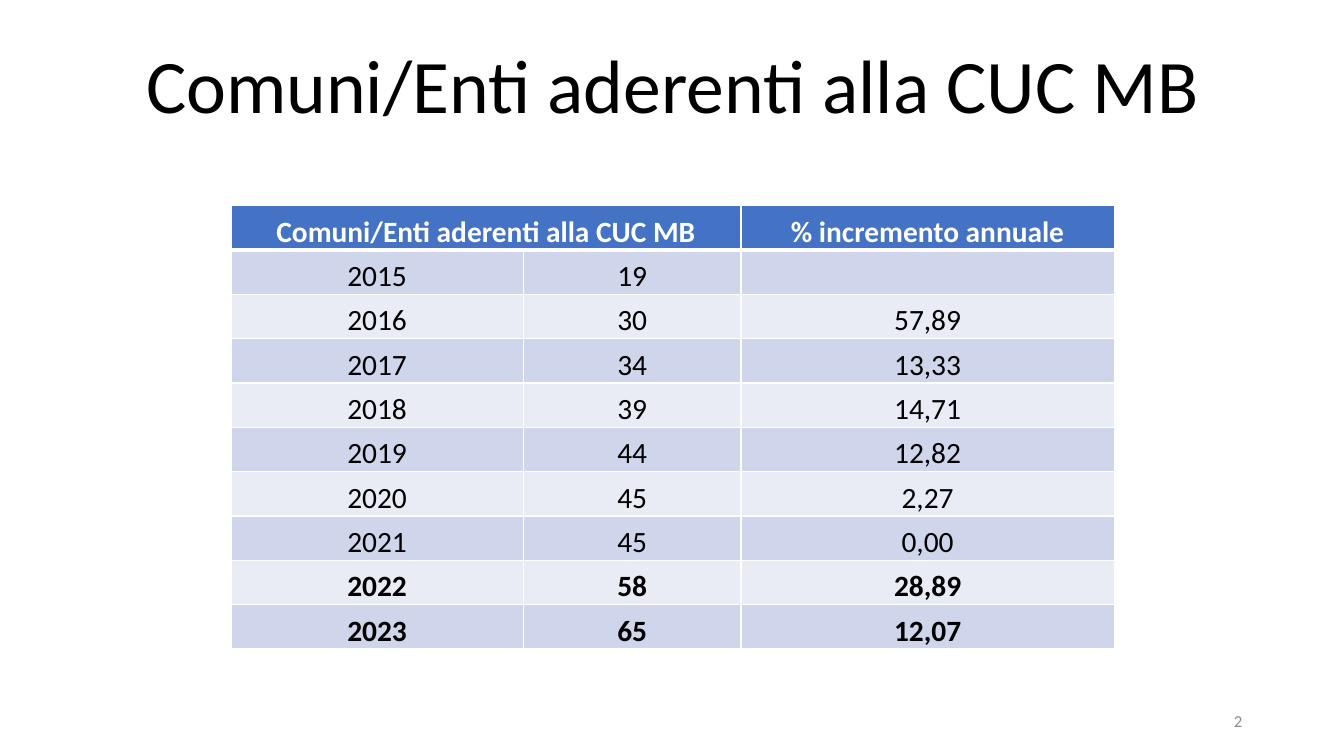
from dataclasses import dataclass

from lxml import etree
from pptx import Presentation
from pptx.dml.color import RGBColor
from pptx.enum.text import MSO_ANCHOR, PP_ALIGN
from pptx.oxml.ns import qn
from pptx.util import Inches, Pt

CENTER, RIGHT = PP_ALIGN.CENTER, PP_ALIGN.RIGHT
BOTTOM, MIDDLE = MSO_ANCHOR.BOTTOM, MSO_ANCHOR.MIDDLE

TITLE = "Comuni/Enti aderenti alla CUC MB"
HEADERS = (TITLE, "", "% incremento annuale")
MEMBERS = (
    ("2015", "19", ""),
    ("2016", "30", "57,89"),
    ("2017", "34", "13,33"),
    ("2018", "39", "14,71"),
    ("2019", "44", "12,82"),
    ("2020", "45", "2,27"),
    ("2021", "45", "0,00"),
    ("2022", "58", "28,89"),
    ("2023", "65", "12,07"),
)
HIGHLIGHTED_YEARS = ("2022", "2023")
COLUMN_WIDTHS = (2.9, 2.16, 3.7)
ROW_HEIGHT = 0.44


@dataclass(frozen=True)
class Theme:
    font: str = "Calibri"
    ink: str = "000000"
    white: str = "FFFFFF"
    muted: str = "8C8C8C"
    header: str = "4472C4"
    bands: tuple = ("CFD5EA", "E9EBF5")
    title_size: int = 54
    table_size: int = 21
    number_size: int = 12
    rule: int = 1
    header_rule: int = 3


def write_text(frame, text, *, font, size, color, align, bold=False, spacing=None):
    paragraph = frame.paragraphs[0]
    paragraph.alignment = align
    if spacing:
        paragraph.line_spacing = spacing
    run = paragraph.add_run()
    run.text = text
    run.font.name = font
    run.font.size = Pt(size)
    run.font.bold = bold
    run.font.color.rgb = RGBColor.from_string(color)


class SlideBuilder:
    """Draws text and tables on one slide in a shared theme."""

    def __init__(self, slide, theme):
        self.slide = slide
        self.theme = theme

    def label(self, text, left, top, width, height, anchor, **style):
        frame = self.slide.shapes.add_textbox(
            Inches(left), Inches(top), Inches(width), Inches(height)
        ).text_frame
        frame.word_wrap = True
        frame.vertical_anchor = anchor
        write_text(frame, text, font=self.theme.font, **style)

    def borders(self, cell, bottom, top):
        properties = cell._tc.get_or_add_tcPr()
        rule = self.theme.rule
        for side, width in (("L", rule), ("R", rule), ("T", top), ("B", bottom)):
            line = etree.SubElement(properties, qn(f"a:ln{side}"), w=str(Pt(width)))
            fill = etree.SubElement(line, qn("a:solidFill"))
            etree.SubElement(fill, qn("a:srgbClr"), val=self.theme.white)

    def cell(self, cell, text, fill, color, bold, top, bottom):
        self.borders(cell, bottom, top)
        cell.fill.solid()
        cell.fill.fore_color.rgb = RGBColor.from_string(fill)
        cell.vertical_anchor = BOTTOM
        cell.margin_left = cell.margin_right = cell.margin_top = Inches(0.01)
        cell.margin_bottom = 0
        if text:
            write_text(cell.text_frame, text, font=self.theme.font,
                       size=self.theme.table_size, color=color,
                       align=CENTER, bold=bold)

    def table(self, left, top, headers, records, highlighted):
        theme = self.theme
        rows = (headers, *records)
        table = self.slide.shapes.add_table(
            len(rows), len(headers), Inches(left), Inches(top),
            Inches(sum(COLUMN_WIDTHS)), Inches(ROW_HEIGHT * len(rows))
        ).table
        for column, width in zip(table.columns, COLUMN_WIDTHS):
            column.width = Inches(width)
        table.cell(0, 0).merge(table.cell(0, 1))
        for index, values in enumerate(rows):
            table.rows[index].height = Inches(ROW_HEIGHT)
            is_header = index == 0
            fill = theme.header if is_header else theme.bands[(index - 1) % 2]
            color = theme.white if is_header else theme.ink
            bold = is_header or values[0] in highlighted
            above = theme.header_rule if index == 1 else theme.rule
            below = theme.header_rule if is_header else theme.rule
            for position, value in enumerate(values):
                self.cell(table.cell(index, position), value, fill, color,
                          bold, above, below)


def main():
    presentation = Presentation()
    presentation.slide_width = Inches(13.33)
    presentation.slide_height = Inches(7.5)
    theme = Theme()
    builder = SlideBuilder(
        presentation.slides.add_slide(presentation.slide_layouts[6]), theme)
    builder.label(TITLE, 0.92, 0.32, 11.5, 1.02, BOTTOM, size=theme.title_size,
                  color=theme.ink, align=CENTER, spacing=0.9)
    builder.table(2.29, 2.04, HEADERS, MEMBERS, HIGHLIGHTED_YEARS)
    builder.label("2", 9.42, 6.95, 3, 0.4, MIDDLE, size=theme.number_size,
                  color=theme.muted, align=RIGHT)
    presentation.save("out.pptx")


if __name__ == "__main__":
    main()
